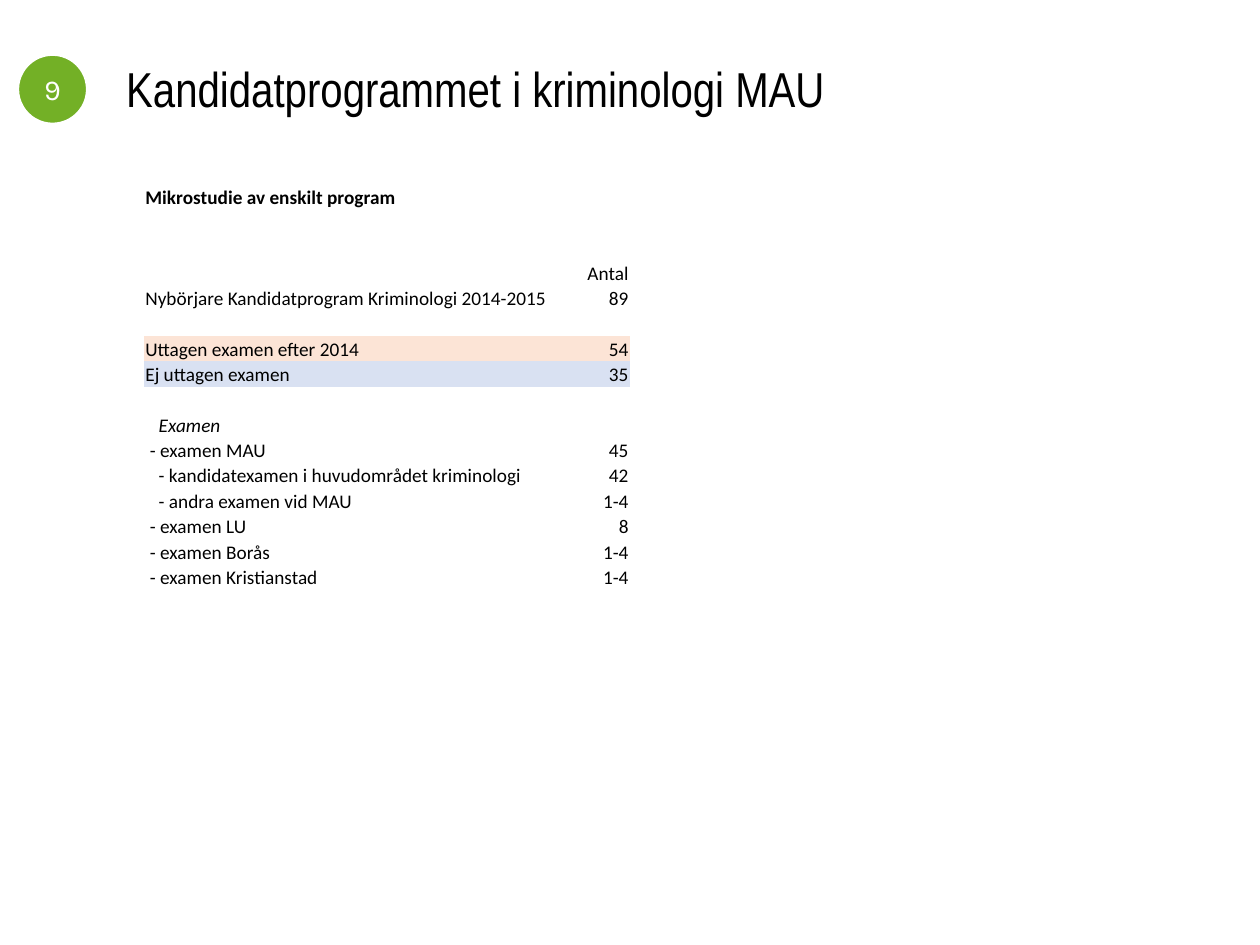
import lxml.etree
import pptx
import pptx.dml.color
import pptx.enum.shapes
import pptx.enum.text
import pptx.oxml.ns
import pptx.util

Cm = pptx.util.Cm
Pt = pptx.util.Pt
ALIGN = pptx.enum.text.PP_ALIGN
MIDDLE = pptx.enum.text.MSO_ANCHOR.MIDDLE
BOTTOM = pptx.enum.text.MSO_ANCHOR.BOTTOM

COLORS = {
    "text": "000000",
    "white": "FFFFFF",
    "badge": "73B026",
    "graduated": "FCE4D6",
    "not_graduated": "D9E1F2",
}
NO_STYLE = "{2D5ABB26-0587-4C30-8999-92F81FD0307C}"
INDENT = 0.09
BODY_SIZE = 11
ROWS = [
    ("Mikrostudie av enskilt program", "", {"bold": True}),
    ("", "", {}),
    ("", "", {}),
    ("", "Antal", {}),
    ("Nybörjare Kandidatprogram Kriminologi 2014-2015", "89", {}),
    ("", "", {}),
    ("Uttagen examen efter 2014", "54", {"fill": "graduated"}),
    ("Ej uttagen examen", "35", {"fill": "not_graduated"}),
    ("", "", {}),
    ("Examen", "", {"italic": True, "level": 3}),
    ("- examen MAU", "45", {"level": 1}),
    ("- kandidatexamen i huvudområdet kriminologi", "42", {"level": 3}),
    ("- andra examen vid MAU", "1-4", {"level": 3}),
    ("- examen LU", "8", {"level": 1}),
    ("- examen Borås", "1-4", {"level": 1}),
    ("- examen Kristianstad", "1-4", {"level": 1}),
]


def rgb(name):
    """Return the named colour."""
    return pptx.dml.color.RGBColor.from_string(COLORS[name])


def write_text(frame, text, font="Calibri", size=BODY_SIZE, color="text",
               bold=False, italic=False, align=ALIGN.LEFT):
    """Write one formatted line in a text frame."""
    paragraph = frame.paragraphs[0]
    paragraph.alignment = align
    if not text:
        lxml.etree.SubElement(
            paragraph._p, pptx.oxml.ns.qn("a:endParaRPr"), sz=str(size * 100))
        return
    run = paragraph.add_run()
    run.text = text
    run.font.name = font
    run.font.size = Pt(size)
    run.font.bold = bold
    run.font.italic = italic
    run.font.color.rgb = rgb(color)


def set_margins(target, left=0.03, top=0.03, right=0.03, bottom=0.03):
    """Set the inner margins of a cell or text frame in centimetres."""
    target.margin_left, target.margin_top = Cm(left), Cm(top)
    target.margin_right, target.margin_bottom = Cm(right), Cm(bottom)


def add_badge(slide, left, top, size):
    """Draw the round page number badge."""
    badge = slide.shapes.add_shape(
        pptx.enum.shapes.MSO_SHAPE.OVAL, Cm(left), Cm(top), Cm(size), Cm(size))
    badge.shadow.inherit = False
    badge.fill.solid()
    badge.fill.fore_color.rgb = rgb("badge")
    badge.line.color.rgb = rgb("white")
    badge.line.width = Pt(1.5)
    frame = badge.text_frame
    set_margins(frame)
    frame.vertical_anchor = MIDDLE
    write_text(frame, "9", font="Karla", size=16.5, color="white",
               align=ALIGN.CENTER)


def add_header(slide, left, top, width, height):
    """Place the title, with the page number badge in the margin beside it."""
    title = slide.shapes.title
    title.left, title.top = Cm(left), Cm(top)
    title.width, title.height = Cm(width), Cm(height)
    frame = title.text_frame
    frame.auto_size = pptx.enum.text.MSO_AUTO_SIZE.NONE
    frame.vertical_anchor = MIDDLE
    write_text(frame, "Kandidatprogrammet i kriminologi MAU",
               font="Arial Narrow", size=28)
    add_badge(slide, left - 1.93, top + 0.08, 1.4)


def fill_cell(cell, text, fill=None, level=0, **text_format):
    """Write and fill one table cell, indented by its level."""
    set_margins(cell, left=0.03 + level * INDENT, bottom=0)
    cell.vertical_anchor = BOTTOM
    if fill:
        cell.fill.solid()
        cell.fill.fore_color.rgb = rgb(fill)
    else:
        cell.fill.background()
    write_text(cell.text_frame, text, **text_format)


def add_study_table(slide, left, top, width, height):
    """Build the table of beginners and degrees."""
    table = slide.shapes.add_table(
        len(ROWS), 2, Cm(left), Cm(top), Cm(width), Cm(height)).table
    table.first_row = False
    table.horz_banding = False
    table._tbl.tblPr.find(pptx.oxml.ns.qn("a:tableStyleId")).text = NO_STYLE
    count_width = 1.04
    table.columns[0].width = Cm(width - count_width)
    table.columns[1].width = Cm(count_width)
    for index, (label, count, style) in enumerate(ROWS):
        table.rows[index].height = Cm(height / len(ROWS))
        fill_cell(table.cell(index, 0), label, **style)
        fill_cell(table.cell(index, 1), count, fill=style.get("fill"),
                  align=ALIGN.RIGHT)


def main():
    """Build and save the presentation."""
    presentation = pptx.Presentation()
    presentation.slide_width, presentation.slide_height = Cm(25.4), Cm(19.05)
    slide = presentation.slides.add_slide(presentation.slide_layouts[5])
    add_header(slide, 2.29, 1.02, 20.88, 1.52)
    add_study_table(slide, 2.9, 3.71, 9.8, 8.18)
    presentation.save("out.pptx")


if __name__ == "__main__":
    main()
